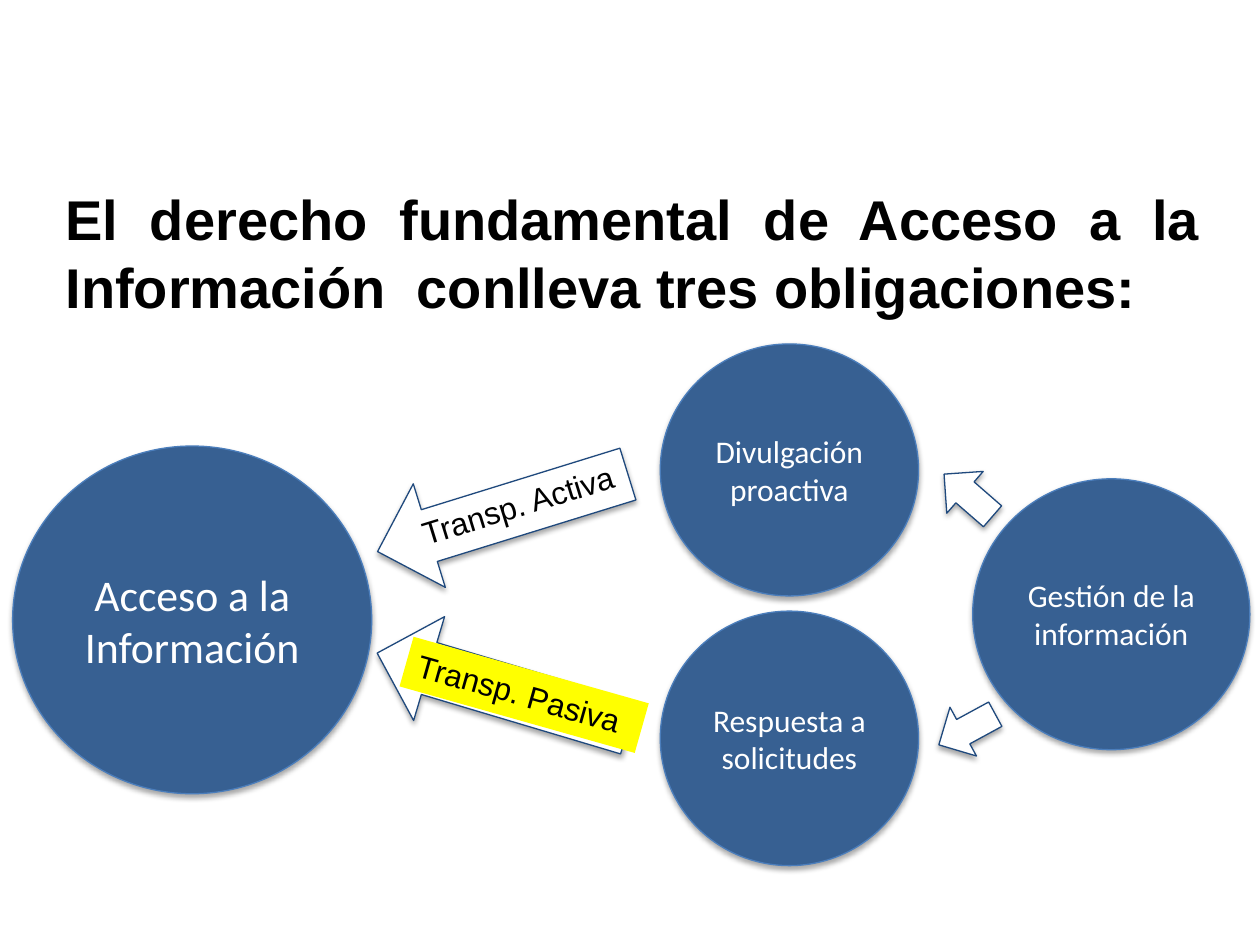
"""Build a slide on the obligations behind the right of access to information."""

from dataclasses import dataclass

from lxml.etree import SubElement
from pptx import Presentation
from pptx.dml.color import RGBColor
from pptx.enum.shapes import MSO_SHAPE
from pptx.enum.text import MSO_ANCHOR, MSO_AUTO_SIZE, PP_ALIGN
from pptx.oxml.ns import qn
from pptx.shapes.autoshape import Shape
from pptx.slide import Slide
from pptx.util import Inches, Pt

COLORS = {
    "circle": "376092",
    "circle_line": "4B7EBC",
    "arrow_line": "1F497D",
    "white": "FFFFFF",
    "black": "000000",
    "highlight": "FFFF00",
}


@dataclass
class Circle:
    text: str
    left: float
    top: float
    width: float
    height: float
    size: int = 18


@dataclass
class Arrow:
    left: float
    top: float
    width: float
    height: float
    rotation: float


@dataclass
class Label:
    text: str
    left: float
    top: float
    width: float
    rotation: float
    fill: str = ""


ACCESS = Circle("Acceso a la Información", 0.1, 3.54, 2.85, 2.76, 25)
REQUESTS = Circle("Respuesta a solicitudes", 5.24, 4.85, 2.05, 2.02)
DISCLOSURE = Circle("Divulgación proactiva", 5.24, 2.73, 2.05, 2)
MANAGEMENT = Circle("Gestión de la información", 7.72, 3.8, 2.2, 2.15)
LARGE_ARROWS = [Arrow(2.95, 5.05, 2.08, 0.86, 196.6), Arrow(2.95, 3.64, 2.08, 0.86, 162.8)]
SMALL_ARROWS = [Arrow(7.43, 3.71, 0.51, 0.44, 221), Arrow(7.42, 5.57, 0.51, 0.44, 151.5)]
LABELS = [
    Label("Transp. Activa", 3.21, 3.71, 2.41, 342.9),
    Label("Transp. Pasiva", 3.19, 5.31, 1.94, 15.8, "highlight"),
]


def color(name: str) -> RGBColor:
    """Return a named colour."""
    return RGBColor.from_string(COLORS[name])


def write(shape: Shape, text: str, size: int, font_name: str, font_color: str, alignment: PP_ALIGN) -> None:
    """Set and format the text of a shape."""
    shape.text_frame.text = text
    shape.text_frame.word_wrap = True
    paragraph = shape.text_frame.paragraphs[0]
    paragraph.alignment = alignment
    font = paragraph.runs[0].font
    font.size = Pt(size)
    font.name = font_name
    font.color.rgb = color(font_color)


def style(shape: Shape, fill: str, line: str) -> None:
    """Give a shape its fill, thin outline and soft shadow below."""
    shape.fill.solid()
    shape.fill.fore_color.rgb = color(fill)
    shape.line.color.rgb = color(line)
    shape.line.width = Pt(0.75)
    shape.shadow.inherit = False
    effects = shape.element.spPr.find(qn("a:effectLst"))
    shadow = SubElement(effects, qn("a:outerShdw"), blurRad=str(Pt(3.1)), dist=str(Pt(1.8)),
                        dir="5400000", rotWithShape="0")
    shade = SubElement(shadow, qn("a:srgbClr"), val=COLORS["black"])
    SubElement(shade, qn("a:alpha"), val="35000")


def add_circle(slide: Slide, circle: Circle) -> None:
    """Draw a circle with centred text."""
    shape = slide.shapes.add_shape(MSO_SHAPE.OVAL, Inches(circle.left), Inches(circle.top),
                                   Inches(circle.width), Inches(circle.height))
    style(shape, "circle", "circle_line")
    write(shape, circle.text, circle.size, "Calibri", "white", PP_ALIGN.CENTER)
    shape.text_frame.vertical_anchor = MSO_ANCHOR.MIDDLE


def add_arrow(slide: Slide, arrow: Arrow) -> None:
    """Draw a rotated block arrow."""
    shape = slide.shapes.add_shape(MSO_SHAPE.RIGHT_ARROW, Inches(arrow.left), Inches(arrow.top),
                                   Inches(arrow.width), Inches(arrow.height))
    shape.rotation = arrow.rotation
    style(shape, "white", "arrow_line")


def add_label(slide: Slide, label: Label) -> None:
    """Draw a rotated label, highlighted if it has a fill."""
    shape = slide.shapes.add_textbox(Inches(label.left), Inches(label.top), Inches(label.width), Inches(0.41))
    shape.rotation = label.rotation
    if label.fill:
        shape.fill.solid()
        shape.fill.fore_color.rgb = color(label.fill)
    write(shape, label.text, 18, "Arial", "black", PP_ALIGN.LEFT)


def add_title(slide: Slide) -> None:
    """Place the justified title."""
    title = slide.shapes.title
    title.left, title.top = Inches(0.42), Inches(1.38)
    title.width, title.height = Inches(9.21), Inches(1.24)
    write(title, "El derecho fundamental de Acceso a la Información  conlleva tres obligaciones:",
          32, "Arial", "black", PP_ALIGN.JUSTIFY)
    title.text_frame.paragraphs[0].runs[0].font.bold = True
    title.text_frame.vertical_anchor = MSO_ANCHOR.MIDDLE
    title.text_frame.auto_size = MSO_AUTO_SIZE.NONE


def main() -> None:
    """Build and save the presentation."""
    presentation = Presentation()
    presentation.slide_width, presentation.slide_height = Inches(10), Inches(7.5)
    slide = presentation.slides.add_slide(presentation.slide_layouts[5])
    add_title(slide)
    for circle in (ACCESS, REQUESTS, DISCLOSURE):
        add_circle(slide, circle)
    for arrow in LARGE_ARROWS:
        add_arrow(slide, arrow)
    for label in LABELS:
        add_label(slide, label)
    add_circle(slide, MANAGEMENT)
    for arrow in SMALL_ARROWS:
        add_arrow(slide, arrow)
    presentation.save("out.pptx")


if __name__ == "__main__":
    main()
